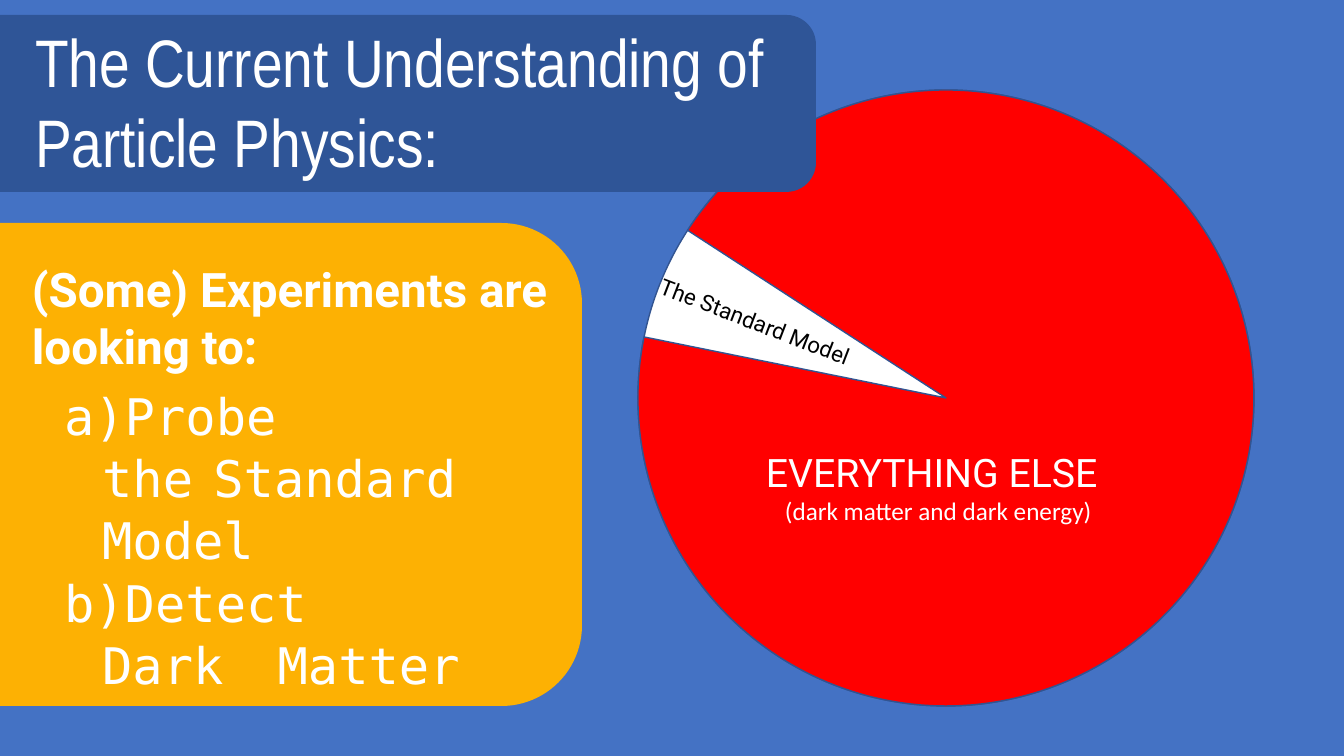
from typing import NamedTuple, Optional

from lxml.etree import SubElement
from pptx import Presentation
from pptx.dml.color import RGBColor
from pptx.enum.shapes import MSO_SHAPE as Preset
from pptx.enum.text import MSO_ANCHOR as Anchor, MSO_AUTO_SIZE as AutoSize, PP_ALIGN as Align
from pptx.oxml.ns import qn
from pptx.util import Emu, Inches, Pt

PX = Inches(1) / 100.8

BLUE = RGBColor(0x44, 0x72, 0xC4)
DARK_BLUE = RGBColor(0x2F, 0x55, 0x97)
OUTLINE = RGBColor(0x32, 0x54, 0x91)
RED = RGBColor(0xFF, 0x00, 0x00)
AMBER = RGBColor(0xFD, 0xB1, 0x03)
WHITE = RGBColor(0xFF, 0xFF, 0xFF)
BLACK = RGBColor(0x00, 0x00, 0x00)

MONO = "DejaVu Sans Mono"
LIST_INDENT = 38


class Box(NamedTuple):
    left: int
    top: int
    width: int
    height: int

    def emu(self) -> list[Emu]:
        return [Emu(round(length * PX)) for length in self]


class Panel(NamedTuple):
    preset: Preset
    box: Box
    fill: RGBColor
    line: Optional[RGBColor] = None
    angles: tuple[float, ...] = ()


class Style(NamedTuple):
    font: str
    size: int
    color: RGBColor = WHITE
    bold: bool = False


class Label(NamedTuple):
    text: str
    box: Box
    style: Style
    rotation: float = 0


class Goal(NamedTuple):
    verb: str
    first_word: str
    gap_size: int
    gap_spacing: int
    rest: str


CIRCLE = Box(638, 90, 616, 616)
PANELS = [
    Panel(Preset.OVAL, CIRCLE, WHITE, OUTLINE),
    Panel(Preset.PIE, CIRCLE, RED, OUTLINE, (212.98, 191.43)),
    Panel(Preset.ROUNDED_RECTANGLE, Box(-123, 15, 939, 177), DARK_BLUE),
    Panel(Preset.ROUNDED_RECTANGLE, Box(-220, 223, 802, 483), AMBER),
]
LABELS = [
    Label("The Standard Model", Box(642, 318, 304, 37), Style("Roboto", 16, BLACK), 21.1),
    Label("EVERYTHING ELSE", Box(756, 443, 380, 57), Style("Roboto", 28)),
    Label("(dark matter and dark energy)", Box(775, 490, 343, 40), Style("Calibri", 18)),
    Label("(Some) Experiments are looking to:", Box(22, 255, 560, 126),
          Style("Roboto", 34, bold=True)),
]
TITLE = Label("The Current Understanding of Particle Physics:", Box(25, 15, 826, 173),
              Style("Arial Narrow", 48))
GOALS_BOX = Box(54, 378, 511, 316)
GOALS = [
    Goal("Probe", "the", 24, 0, "Standard Model"),
    Goal("Detect", "Dark", 36, 17, "Matter"),
]


def add_panel(slide, panel: Panel) -> None:
    shape = slide.shapes.add_shape(panel.preset, *panel.box.emu())
    shape.shadow.inherit = False
    shape.fill.solid()
    shape.fill.fore_color.rgb = panel.fill
    if panel.line is None:
        shape.line.fill.background()
    else:
        shape.line.color.rgb = panel.line
        shape.line.width = Pt(1)
    for index, degrees in enumerate(panel.angles):
        # Angles are stored in 60000ths of a degree, adjustments in 100000ths
        shape.adjustments[index] = degrees * 0.6


def place(shape, box: Box) -> None:
    shape.left, shape.top, shape.width, shape.height = box.emu()
    frame = shape.text_frame
    frame.word_wrap = True
    frame.auto_size = AutoSize.SHAPE_TO_FIT_TEXT
    frame.vertical_anchor = Anchor.TOP


def add_run(paragraph, text: str, style: Style):
    run = paragraph.add_run()
    run.text = text
    run.font.name = style.font
    run.font.size = Pt(style.size)
    run.font.bold = style.bold
    run.font.color.rgb = style.color
    return run


def write_label(shape, label: Label) -> None:
    place(shape, label.box)
    shape.rotation = label.rotation
    paragraph = shape.text_frame.paragraphs[0]
    paragraph.alignment = Align.LEFT
    add_run(paragraph, label.text, label.style)


def letter_paragraph(paragraph) -> None:
    """Number the paragraph a), b) with a hanging indent."""
    properties = paragraph._p.get_or_add_pPr()
    indent = round(LIST_INDENT * PX)
    properties.set("marL", str(indent))
    properties.set("indent", str(-indent))
    SubElement(properties, qn("a:buFont")).set("typeface", MONO)
    SubElement(properties, qn("a:buAutoNum")).set("type", "alphaLcParenR")


def write_goal(paragraph, goal: Goal) -> None:
    paragraph.alignment = Align.LEFT
    paragraph.line_spacing = 1.03
    paragraph.space_before = Pt(0)
    letter_paragraph(paragraph)
    style = Style(MONO, 36)
    add_run(paragraph, goal.verb, style)
    paragraph.add_line_break()
    add_run(paragraph, goal.first_word, style)
    gap = add_run(paragraph, " ", style._replace(size=goal.gap_size))
    if goal.gap_spacing:
        gap._r.get_or_add_rPr().set("spc", str(goal.gap_spacing * 100))
    add_run(paragraph, goal.rest, style)


def write_goals(shape) -> None:
    place(shape, GOALS_BOX)
    frame = shape.text_frame
    for index, goal in enumerate(GOALS):
        write_goal(frame.add_paragraph() if index else frame.paragraphs[0], goal)


def main() -> None:
    presentation = Presentation()
    presentation.slide_width = Emu(round(1344 * PX))
    presentation.slide_height = Emu(round(756 * PX))
    slide = presentation.slides.add_slide(presentation.slide_layouts[1])
    slide.background.fill.solid()
    slide.background.fill.fore_color.rgb = BLUE

    for panel in PANELS:
        add_panel(slide, panel)
    for label in LABELS:
        write_label(slide.shapes.add_textbox(*label.box.emu()), label)

    title, goals = slide.shapes.title, slide.placeholders[1]
    write_label(title, TITLE)
    write_goals(goals)
    for placeholder in (title, goals):
        # Bring the text in front of the panels
        slide.shapes._spTree.append(placeholder._element)

    presentation.save("out.pptx")


if __name__ == "__main__":
    main()
